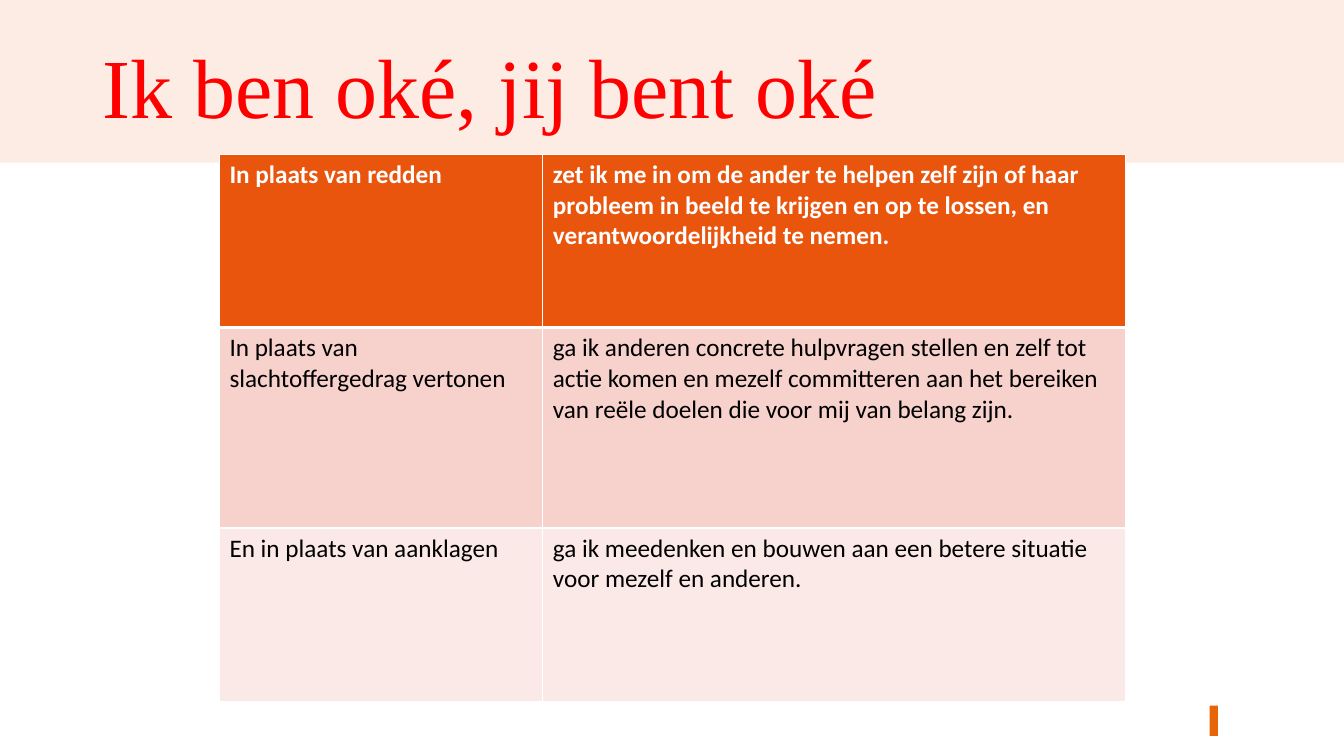
from lxml.etree import SubElement
from pptx import Presentation
from pptx.dml.color import RGBColor
from pptx.enum.shapes import MSO_SHAPE
from pptx.enum.text import MSO_ANCHOR, PP_ALIGN
from pptx.oxml.ns import qn
from pptx.util import Emu, Pt

PX = 9525  # one px in EMU, 96 px to the inch
COLORS = {
    "header band": "FDECE3", "page mark": "E86507", "title": "FF0000",
    "head": "E9550D", "row": "F7D1CC", "light row": "FBE9E7",
    "white": "FFFFFF", "black": "000000",
}


def px(*lengths):
    return [Emu(length * PX) for length in lengths]


def write(frame, text, font="Calibri", size=18, color="black", bold=False, spacing=1.0):
    frame.word_wrap = True
    paragraph = frame.paragraphs[0]
    paragraph.alignment = PP_ALIGN.LEFT
    paragraph.line_spacing = spacing
    run = paragraph.add_run()
    run.text = text
    run.font.name = font
    run.font.size = Pt(size)
    run.font.bold = bold
    run.font.color.rgb = RGBColor.from_string(COLORS[color])


deck = Presentation()
deck.slide_width, deck.slide_height = px(1280, 720)
slide = deck.slides.add_slide(deck.slide_layouts[5])
title = slide.shapes.title

# Header band and page mark, behind the title
for part, box in (("header band", (0, 0, 1280, 155)), ("page mark", (1152, 672, 8, 29))):
    block = slide.shapes.add_shape(MSO_SHAPE.RECTANGLE, *px(*box))
    block.shadow.inherit = False
    block.fill.solid()
    block.fill.fore_color.rgb = RGBColor.from_string(COLORS[part])
    block.line.fill.background()
    title.element.addprevious(block.element)

# Title
title.left, title.top, title.width, title.height = px(88, 39, 953, 82)
title.text_frame.vertical_anchor = MSO_ANCHOR.TOP
write(title.text_frame, "Ik ben oké, jij bent oké",
      font="Times New Roman", size=60, color="title", spacing=0.9)

# Table of old and new behaviour
behaviours = [
    ("In plaats van redden",
     "zet ik me in om de ander te helpen zelf zijn of haar probleem in beeld "
     "te krijgen en op te lossen, en verantwoordelijkheid te nemen."),
    ("In plaats van slachtoffergedrag vertonen",
     "ga ik anderen concrete hulpvragen stellen en zelf tot actie komen en mezelf "
     "committeren aan het bereiken van reële doelen die voor mij van belang zijn."),
    ("En in plaats van aanklagen",
     "ga ik meedenken en bouwen aan een betere situatie voor mezelf en anderen."),
]
column_widths = px(308, 555)
row_heights = px(165, 191, 165)
row_fills = ("head", "row", "light row")

table = slide.shapes.add_table(
    3, 2, *px(209, 147), sum(column_widths), sum(row_heights)).table
for column, width in zip(table.columns, column_widths):
    column.width = width

for index, (row, height, fill, texts) in enumerate(
        zip(table.rows, row_heights, row_fills, behaviours)):
    row.height = height
    is_head = index == 0
    for cell, text in zip(row.cells, texts):
        write(cell.text_frame, text, color="white" if is_head else "black", bold=is_head)
        # Borders come before the fill in the cell properties
        for side in ("lnL", "lnR", "lnT", "lnB"):
            thick = (side, index) in (("lnB", 0), ("lnT", 1))
            border = SubElement(cell._tc.get_or_add_tcPr(), qn(f"a:{side}"),
                                w=str(Pt(3 if thick else 1)))
            SubElement(SubElement(border, qn("a:solidFill")), qn("a:srgbClr"),
                       val=COLORS["white"])
        cell.fill.solid()
        cell.fill.fore_color.rgb = RGBColor.from_string(COLORS[fill])

deck.save("out.pptx")
